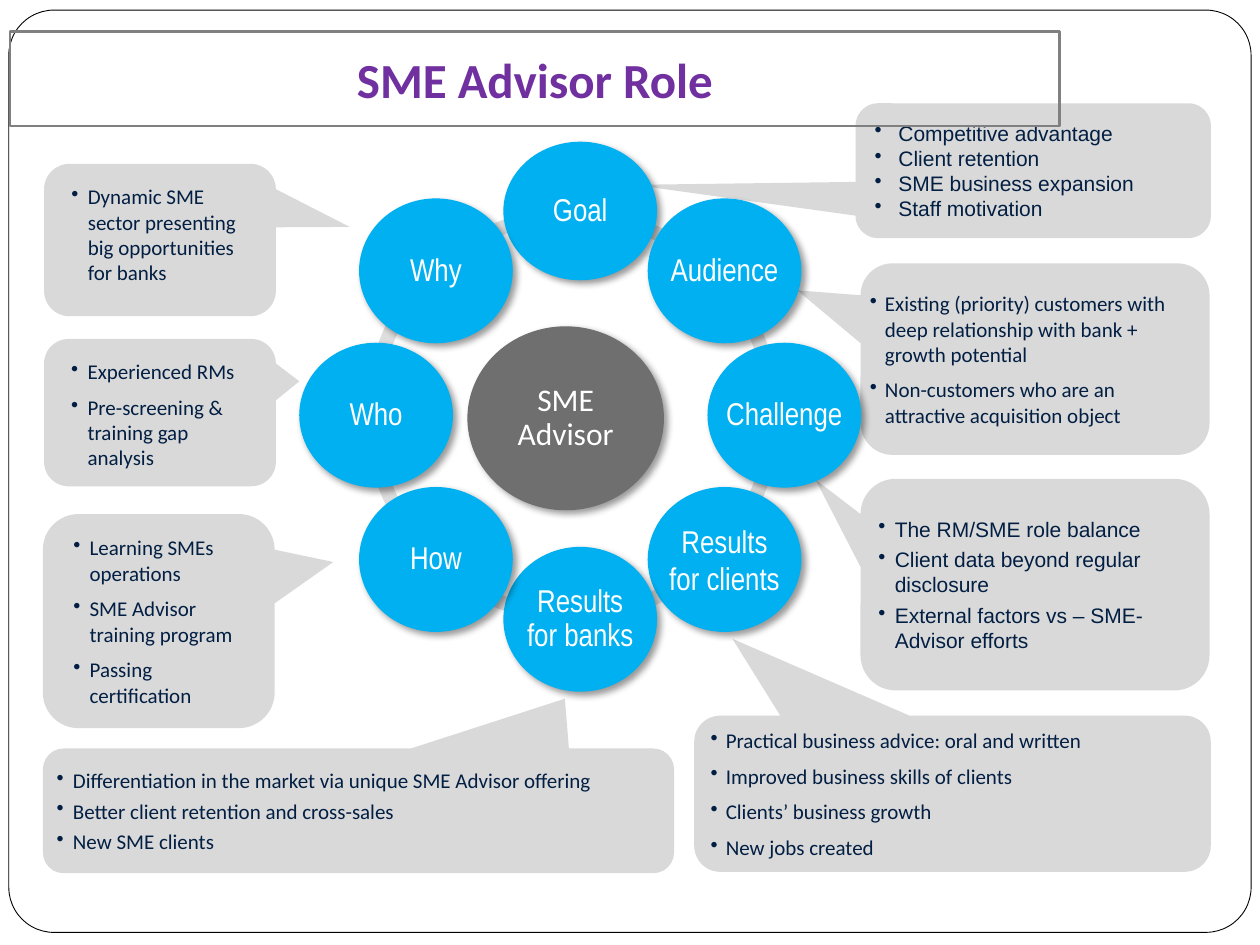
import math
from dataclasses import dataclass

from lxml import etree
from pptx import Presentation
from pptx.dml.color import RGBColor
from pptx.enum.shapes import MSO_SHAPE
from pptx.enum.text import MSO_ANCHOR, PP_ALIGN
from pptx.oxml.ns import qn
from pptx.util import Inches, Pt

TOP, MIDDLE = MSO_ANCHOR.TOP, MSO_ANCHOR.MIDDLE
LEFT, CENTER = PP_ALIGN.LEFT, PP_ALIGN.CENTER
ROUNDED, CALLOUT = MSO_SHAPE.ROUNDED_RECTANGLE, MSO_SHAPE.ROUNDED_RECTANGULAR_CALLOUT
OVAL, ARC = MSO_SHAPE.OVAL, MSO_SHAPE.BLOCK_ARC
TITLE_ONLY = 5


@dataclass(frozen=True)
class Theme:
    white: str = "FFFFFF"
    black: str = "000000"
    title: str = "7030A0"
    title_line: str = "808080"
    node: str = "00B0F0"
    hub: str = "6F6F6F"
    ring: str = "DEDEDE"
    callout: str = "D9D9D9"
    body: str = "021F43"
    font: str = "Calibri"
    alternate_font: str = "Arial"
    narrow_font: str = "Arial Narrow"
    title_size: int = 28
    node_size: int = 18
    body_size: int = 12


THEME = Theme()

# Box, tail tip (relative to the box centre), bullets, and format of each callout
CALLOUTS = [
    ((6.79, 0.82, 2.82, 1.07), (-1.125, 0.105),
     ["Competitive advantage", "Client retention", "SME business expansion",
      "Staff motivation"],
     dict(margin=0.1, hanging=0.19, font=THEME.alternate_font)),
    ((0.35, 1.3, 1.84, 1.21), (0.818, -0.086),
     ["Dynamic SME sector presenting big opportunities for banks"],
     dict(margin=0.1, before=3, after=3, anchor=TOP)),
    ((6.83, 3.8, 2.77, 1.68), (-0.629, -0.496),
     ["The RM/SME role balance", "Client data beyond regular disclosure",
      "External factors vs – SME-Advisor efforts"],
     dict(after=3, font=THEME.alternate_font)),
    ((6.83, 2.09, 2.77, 1.52), (-0.681, -0.359),
     ["Existing (priority) customers with deep relationship with bank + growth potential",
      "Non-customers who are an attractive acquisition object"],
     dict(indent=0.12, hanging=0.12, before=3, after=3)),
    ((5.51, 5.68, 4.1, 1.24), (-0.426, -0.992),
     ["Practical business advice: oral and written",
      "Improved business skills of clients", "Clients’ business growth",
      "New jobs created"],
     dict(hanging=0.12, before=6)),
    ((0.35, 2.69, 1.84, 1.17), (0.601, -0.212),
     ["Experienced RMs", "Pre-screening & training gap analysis"],
     dict(margin=0.1, before=3, after=3, anchor=TOP)),
    ((0.34, 4.08, 1.84, 1.7), (0.753, -0.276),
     ["Learning SMEs operations", "SME Advisor training program",
      "Passing certification"],
     dict(margin=0.1, before=3, after=3)),
    ((0.34, 5.94, 5.01, 0.99), (0.327, -0.899),
     ["Differentiation in the market via unique SME Advisor offering",
      "Better client retention and cross-sales", "New SME clients"],
     dict(before=3)),
]

# Clockwise from the top: lines, height, wraps, line spacing
NODES = [
    (["Goal"], 1.1, True, 0.9),
    (["Audience"], 1.15, False, 0.9),
    (["Challenge"], 1.15, False, 0.9),
    (["Results", "for clients"], 1.15, False, 1.0),
    (["Results for banks"], 1.15, True, 0.9),
    (["How"], 1.15, True, 0.9),
    (["Who"], 1.15, True, 0.9),
    (["Why"], 1.15, True, 0.9),
]


def color(value):
    return RGBColor.from_string(value)


def write_text(shape, lines, *, size, fill, font=THEME.font, bold=False, align=LEFT,
               anchor=MIDDLE, margin=0, wrap=True, spacing=None, before=0, after=0,
               bullet=False, indent=0.19, hanging=0.13):
    frame = shape.text_frame
    frame.word_wrap = wrap
    frame.vertical_anchor = anchor
    frame.margin_left = frame.margin_right = Inches(margin)
    frame.margin_top = frame.margin_bottom = Inches(margin)
    for index, line in enumerate(lines):
        paragraph = frame.add_paragraph() if index else frame.paragraphs[0]
        paragraph.text = line
        if bullet:
            properties = paragraph._p.get_or_add_pPr()
            properties.set("marL", str(Inches(indent)))
            properties.set("indent", str(-Inches(hanging)))
            etree.SubElement(properties, qn("a:buChar"), char="•")
        paragraph.alignment = align
        paragraph.space_before = Pt(before if index else 0)
        paragraph.space_after = Pt(after)
        if spacing:
            paragraph.line_spacing = spacing
        paragraph.font.name = font
        paragraph.font.size = Pt(size)
        paragraph.font.bold = bold
        paragraph.font.color.rgb = color(fill)


def add_shape(slide, kind, box, fill, adjustments=()):
    shape = slide.shapes.add_shape(kind, *map(Inches, box))
    shape.shadow.inherit = False
    shape.fill.solid()
    shape.fill.fore_color.rgb = color(fill)
    shape.line.fill.background()
    for index, value in enumerate(adjustments):
        shape.adjustments[index] = value
    return shape


def add_shadow(shape):
    effects = shape.element.spPr.find(qn("a:effectLst"))
    shadow = etree.SubElement(effects, qn("a:outerShdw"), blurRad=str(Pt(4)),
                              dist=str(Pt(3)), dir="2700000", rotWithShape="0")
    tint = etree.SubElement(shadow, qn("a:srgbClr"), val=THEME.black)
    etree.SubElement(tint, qn("a:alpha"), val="40000")


def add_frame(slide, box):
    frame = add_shape(slide, ROUNDED, box, THEME.white, [0.049])
    frame.line.color.rgb = color(THEME.black)
    frame.line.width = Pt(0.5)


def add_title(slide, box, text):
    title = slide.shapes.title
    title.left, title.top, title.width, title.height = map(Inches, box)
    title.line.color.rgb = color(THEME.title_line)
    title.line.width = Pt(1.5)
    write_text(title, [text], size=THEME.title_size, fill=THEME.title, bold=True,
               align=CENTER, margin=0.05)
    # The outline runs over the callout below it
    title.element.getparent().append(title.element)


def add_callout(slide, box, tail, lines, text_format):
    callout = add_shape(slide, CALLOUT, box, THEME.callout, [*tail, 0.167])
    write_text(callout, lines, size=THEME.body_size, fill=THEME.body, bullet=True,
               **text_format)


def add_disc(slide, box, fill, lines, **text_format):
    disc = add_shape(slide, OVAL, box, fill)
    add_shadow(disc)
    write_text(disc, lines, size=THEME.node_size, fill=THEME.white, align=CENTER,
               **text_format)


def add_wheel(slide, box):
    left, top, width, height = box
    # Ring segments; arc angles are stored as 0.6 per degree
    bounds = [*range(0, 190, 27), 0]
    for start, end in zip(bounds, bounds[1:]):
        add_shape(slide, ARC, box, THEME.ring, [start * 0.6, end * 0.6, 0.034])
    # Hub
    add_disc(slide, (left + 0.81, top + 0.94, 1.56, 1.46), THEME.hub,
             ["SME Advisor"], spacing=0.9)
    # Nodes at equal angles
    center_x, center_y, radius = left + width / 2 + 0.06, top + height / 2, 1.62
    node_width = 1.22
    for index, (lines, node_height, wrap, spacing) in enumerate(NODES):
        angle = math.tau * index / len(NODES)
        x = center_x + radius * math.sin(angle) - node_width / 2
        y = center_y - radius * math.cos(angle) - node_height / 2
        add_disc(slide, (x, y, node_width, node_height), THEME.node, lines,
                 font=THEME.narrow_font, wrap=wrap, spacing=spacing)


def main():
    presentation = Presentation()
    presentation.slide_width, presentation.slide_height = Inches(10), Inches(7.5)
    slide = presentation.slides.add_slide(presentation.slide_layouts[TITLE_ONLY])
    add_frame(slide, (0.07, 0.08, 9.86, 7.32))
    for callout in CALLOUTS:
        add_callout(slide, *callout)
    add_wheel(slide, (2.9, 1.65, 3.29, 3.29))
    add_title(slide, (0.08, 0.25, 8.33, 0.75), "SME Advisor Role")
    presentation.save("out.pptx")


if __name__ == "__main__":
    main()
